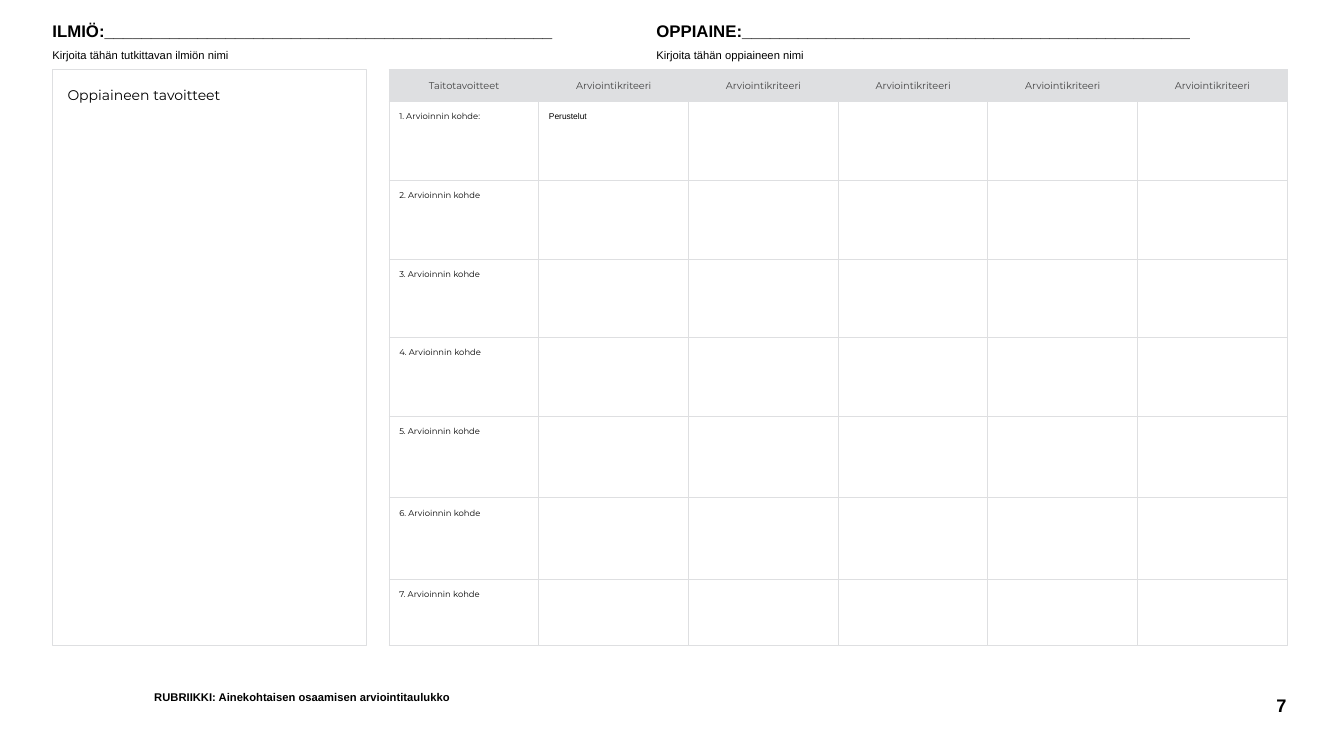
import lxml.etree
import pptx
import pptx.dml.color
import pptx.enum.shapes
import pptx.enum.text
import pptx.oxml.ns
import pptx.util

Inches = pptx.util.Inches
Pt = pptx.util.Pt
RGBColor = pptx.dml.color.RGBColor
Align = pptx.enum.text.PP_ALIGN
Anchor = pptx.enum.text.MSO_ANCHOR
qn = pptx.oxml.ns.qn

BLACK = RGBColor(0x00, 0x00, 0x00)
DARK_GREY = RGBColor(0x43, 0x43, 0x43)
LIGHT_GREY = RGBColor(0xDE, 0xDF, 0xE1)

COLUMNS = ["Taitotavoitteet"] + ["Arviointikriteeri"] * 5
TARGETS = ["1. Arvioinnin kohde:"] + [f"{n}. Arvioinnin kohde" for n in range(2, 8)]
ROW_HEIGHTS = [0.32] + [0.78] * 4 + [0.81] * 2 + [0.65]
TABLE_WIDTH = 8.91
PANEL_TOP = 0.69


def write(para, text, size, font="Arial", color=BLACK, bold=False,
          align=Align.LEFT, line_spacing=None, before=None):
    para.alignment = align
    if line_spacing:
        para.line_spacing = line_spacing
    if before:
        para.space_before = Pt(before)
    span = para.add_run()
    span.text = text
    span.font.size = Pt(size)
    span.font.name = font
    span.font.bold = bold
    span.font.color.rgb = color


def add_box(page, left, top, width, height, inset=0.02, anchor=Anchor.TOP):
    box = page.shapes.add_textbox(Inches(left), Inches(top), Inches(width), Inches(height))
    frame = box.text_frame
    frame.word_wrap = True
    frame.vertical_anchor = anchor
    frame.margin_left = Inches(inset)
    frame.margin_right = frame.margin_top = frame.margin_bottom = 0
    return frame


def add_heading(page, left, label, hint):
    frame = add_box(page, left, 0.23, 6.12, 0.35)
    write(frame.paragraphs[0], label + ":" + "_" * 48, 12, bold=True, line_spacing=0.9)
    write(frame.add_paragraph(), hint, 8, line_spacing=0.9, before=6)


def add_panel(page):
    panel = page.shapes.add_shape(pptx.enum.shapes.MSO_SHAPE.RECTANGLE, Inches(0.52),
                                  Inches(PANEL_TOP), Inches(3.12), Inches(5.71))
    panel.shadow.inherit = False
    panel.fill.background()
    panel.line.color.rgb = LIGHT_GREY
    panel.line.width = Pt(0.75)
    frame = add_box(page, 0.65, 0.86, 2.86, 0.35)
    write(frame.paragraphs[0], "Oppiaineen tavoitteet", 10, font="Montserrat")


def style_cell(cell, is_header):
    cell.margin_left = cell.margin_right = Inches(0.1)
    cell.margin_top = cell.margin_bottom = Inches(0.1)
    properties = cell._tc.get_or_add_tcPr()
    for side in ("a:lnL", "a:lnR", "a:lnT", "a:lnB"):
        line = lxml.etree.SubElement(properties, qn(side), w=str(Pt(0.75)))
        fill = lxml.etree.SubElement(line, qn("a:solidFill"))
        lxml.etree.SubElement(fill, qn("a:srgbClr"), val=str(LIGHT_GREY))
    if is_header:
        cell.fill.solid()
        cell.fill.fore_color.rgb = LIGHT_GREY
    else:
        cell.fill.background()


def add_rubric(page):
    table = page.shapes.add_table(
        len(ROW_HEIGHTS), len(COLUMNS), Inches(3.86), Inches(PANEL_TOP),
        Inches(TABLE_WIDTH), Inches(sum(ROW_HEIGHTS))).table
    table.horz_banding = False
    for column in table.columns:
        column.width = Inches(TABLE_WIDTH / len(COLUMNS))
    for index, (row, height) in enumerate(zip(table.rows, ROW_HEIGHTS)):
        row.height = Inches(height)
        for cell in row.cells:
            style_cell(cell, index == 0)
    for index, title in enumerate(COLUMNS):
        write(table.cell(0, index).text_frame.paragraphs[0], title, 7,
              font="Montserrat", color=DARK_GREY, align=Align.CENTER)
    for index, target in enumerate(TARGETS, start=1):
        write(table.cell(index, 0).text_frame.paragraphs[0], target, 6, font="Montserrat")
    write(table.cell(1, 1).text_frame.paragraphs[0], "Perustelut", 6)


def main():
    deck = pptx.Presentation()
    deck.slide_width = Inches(13.33)
    deck.slide_height = Inches(7.5)
    page = deck.slides.add_slide(deck.slide_layouts[6])

    # Assessment table
    add_rubric(page)

    # Headings to fill in
    add_heading(page, 0.5, "ILMIÖ", "Kirjoita tähän tutkittavan ilmiön nimi")
    add_heading(page, 6.49, "OPPIAINE", "Kirjoita tähän oppiaineen nimi")

    # Subject goals
    add_panel(page)

    # Footer and page number
    footer = add_box(page, 1.51, 6.86, 4.1, 0.22)
    write(footer.paragraphs[0], "RUBRIIKKI: Ainekohtaisen osaamisen arviointitaulukko", 8,
          bold=True, line_spacing=0.9)
    number = add_box(page, 11.41, 6.86, 1.35, 0.28, inset=0, anchor=Anchor.MIDDLE)
    write(number.paragraphs[0], "7", 13, bold=True, align=Align.RIGHT)

    deck.save("out.pptx")


if __name__ == "__main__":
    main()
